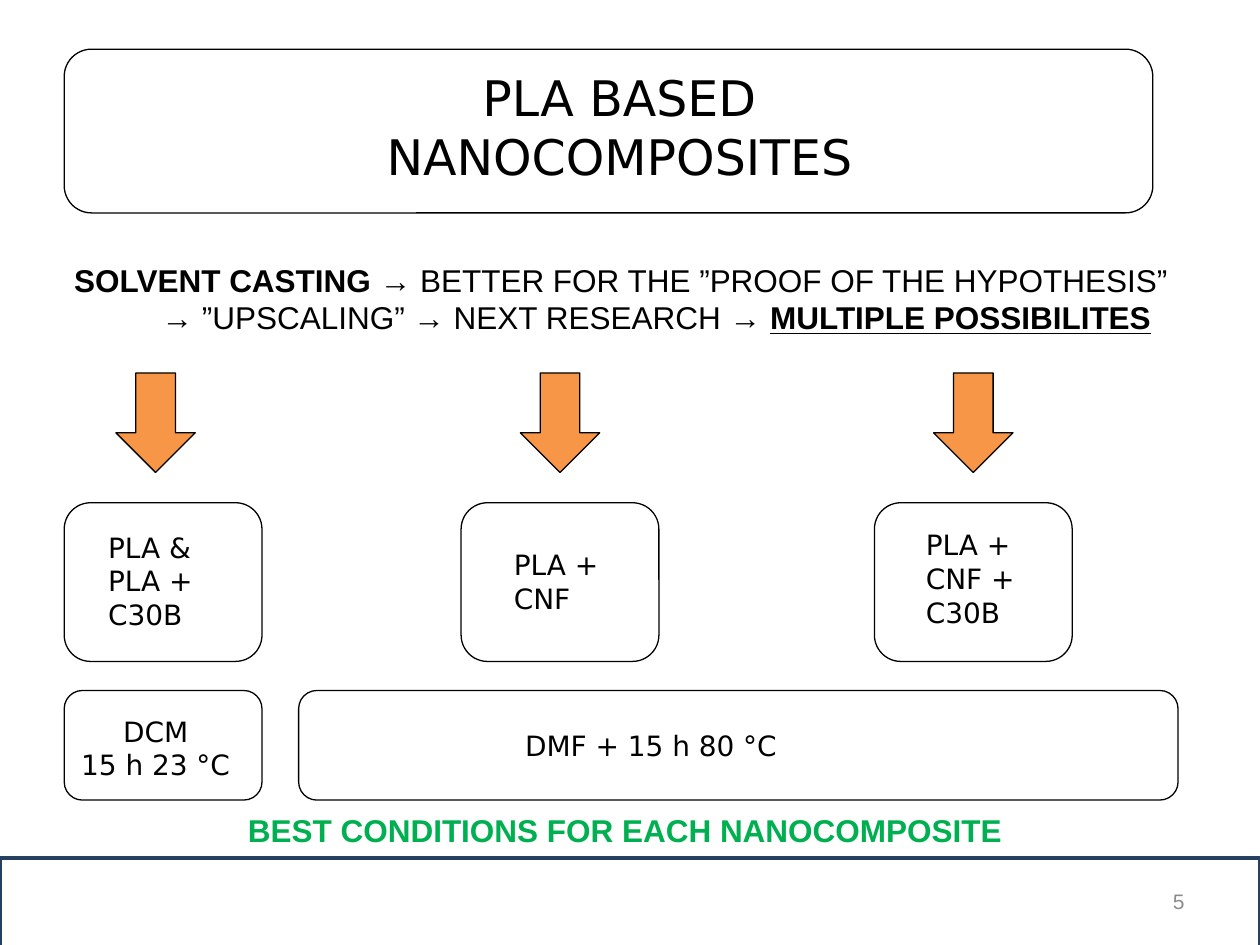
from pptx import Presentation
from pptx import util as u
from pptx.dml.color import RGBColor
from pptx.enum import shapes, text

COLORS = {
    "ink": "000000",
    "paper": "FFFFFF",
    "navy": "254061",
    "orange": "F79646",
    "green": "00B050",
    "gray": "8C8C8C",
}
WIDTH, HEIGHT = u.Inches(10), u.Inches(7.5)
HEADING = "DejaVu Sans"
BODY = "Arial"
LEFT = text.PP_ALIGN.LEFT
CENTER = text.PP_ALIGN.CENTER
RIGHT = text.PP_ALIGN.RIGHT
ROUNDED = shapes.MSO_SHAPE.ROUNDED_RECTANGLE
ARROW = shapes.MSO_SHAPE.DOWN_ARROW
RECTANGLE = shapes.MSO_SHAPE.RECTANGLE

COLUMNS = [
    (5.1, 9.2, ["PLA & PLA +", "C30B"], (7.6, 55.47, 9.4, 12.13)),
    (36.6, 41.3, ["PLA +", "CNF"], (39.8, 57.33, 9.5, 8.53)),
    (69.4, 74.1, ["PLA +", "CNF +", "C30B"], (72.5, 55.2, 10.9, 15.73)),
]


def color(name):
    return RGBColor.from_string(COLORS[name])


def place(x, y, w, h):
    return [int(share * side / 100)
            for share, side in zip((x, y, w, h), (WIDTH, HEIGHT) * 2)]


def add_shape(s, kind, box, fill=None, line="ink", weight=0.75):
    sp = s.shapes.add_shape(kind, *place(*box))
    sp.shadow.inherit = False
    if fill:
        sp.fill.solid()
        sp.fill.fore_color.rgb = color(fill)
    else:
        sp.fill.background()
    sp.line.color.rgb = color(line)
    sp.line.width = u.Pt(weight)
    return sp


def style(r, size, font, ink, bold=False):
    r.font.size = u.Pt(size)
    r.font.name = font
    r.font.bold = bold
    r.font.color.rgb = color(ink)


def add_text(s, box, lines, size=16, font=HEADING, ink="ink", align=LEFT, bold=False):
    tf = s.shapes.add_textbox(*place(*box)).text_frame
    tf.word_wrap = True
    tf.text = "\n".join(lines)
    for p in tf.paragraphs:
        p.alignment = align
        for r in p.runs:
            style(r, size, font, ink, bold)
    return tf


def add_summary(s):
    lines = [
        [("SOLVENT CASTING ", True), ("→ BETTER FOR THE ”PROOF OF THE HYPOTHESIS”", False)],
        [("→ ”UPSCALING” → NEXT RESEARCH → ", False), ("MULTIPLE POSSIBILITES", True)],
    ]
    tf = add_text(s, (3.5, 26.93, 91.6, 9.47), ["", ""], align=CENTER)
    for p, pieces in zip(tf.paragraphs, lines):
        for words, bold in pieces:
            r = p.add_run()
            r.text = words
            style(r, 18, BODY, "ink", bold)
    second = tf.paragraphs[1]
    second._p.get_or_add_pPr().set("marL", str(u.Inches(0.56)))
    second.runs[-1].font.underline = True


def add_column(s, left, arrow_left, lines, text_box):
    add_shape(s, ARROW, (arrow_left, 39.47, 6.3, 10.53), "orange")
    add_shape(s, ROUNDED, (left, 53.2, 15.7, 16.8))
    add_text(s, text_box, lines)


def add_conditions(s):
    for left, width in [(5.1, 15.7), (23.7, 69.8)]:
        add_shape(s, ROUNDED, (left, 73.07, width, 11.6))
    add_text(s, (3.3, 74.93, 18.1, 8.53), ["DCM", "15 h 23 °C"], align=CENTER)
    add_text(s, (40.7, 76.4, 45.7, 4.93), ["DMF + 15 h 80 °C"])
    add_text(s, (18.7, 85.2, 64, 4.93), ["BEST CONDITIONS FOR EACH NANOCOMPOSITE"],
             18, BODY, "green", bold=True)


def add_footer(s):
    add_shape(s, RECTANGLE, (0, 90.8, 100, 9.6), "paper", "navy", 2.25)
    tf = add_text(s, (71.7, 92.67, 23.3, 5.33), ["5"], 12, BODY, "gray", RIGHT)
    tf.vertical_anchor = text.MSO_ANCHOR.MIDDLE


def main():
    prs = Presentation()
    prs.slide_width, prs.slide_height = WIDTH, HEIGHT
    s = prs.slides.add_slide(prs.slide_layouts[6])
    add_footer(s)
    add_shape(s, ROUNDED, (5.1, 5.2, 86.4, 17.33))
    add_text(s, (24.6, 6.53, 49.1, 14), ["PLA BASED NANOCOMPOSITES"], 28, align=CENTER)
    add_summary(s)
    for column in COLUMNS:
        add_column(s, *column)
    add_conditions(s)
    prs.save("out.pptx")


if __name__ == "__main__":
    main()
